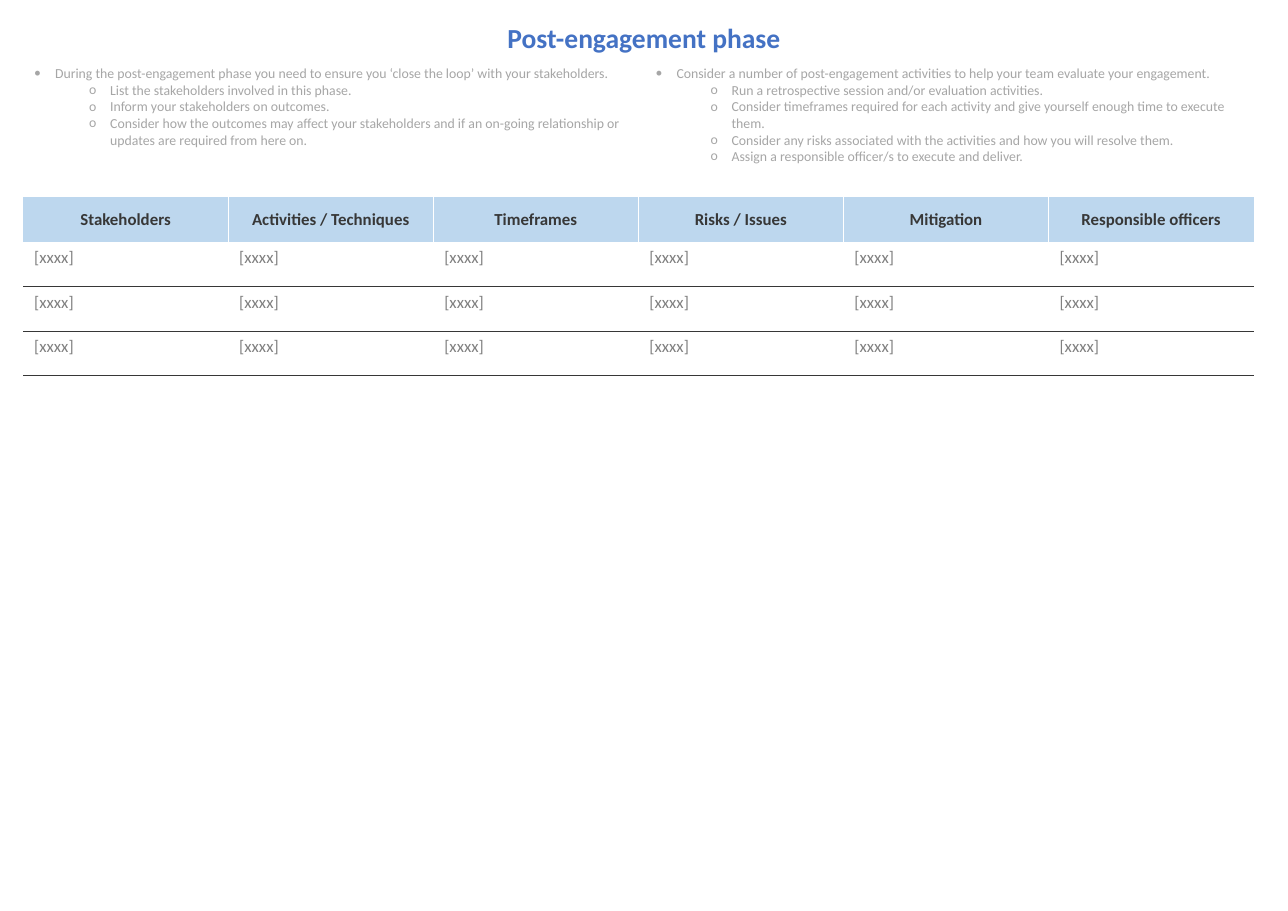
"""Build the post-engagement phase planning slide."""
from dataclasses import dataclass

from lxml import etree
from pptx import Presentation
from pptx import util as u
from pptx.dml.color import RGBColor
from pptx.enum import text
from pptx.oxml import ns


@dataclass(frozen=True)
class Theme:
    font: str = "Calibri"
    title: str = "4472C4"
    guide: str = "A6A6A6"
    ink: str = "373737"
    entry: str = "808080"
    header: str = "BDD7EE"
    divider: str = "FFFFFF"
    title_size: float = 18
    guide_size: float = 9
    table_size: float = 11
    border: float = 0.5
    plain_table: str = "{2D5ABB26-0587-4C30-8999-92F81FD0307C}"


class Deck:
    def __init__(self, theme, width, height):
        self.theme = theme
        self.prs = Presentation()
        self.prs.slide_width, self.prs.slide_height = u.Inches(width), u.Inches(height)
        self.s = self.prs.slides.add_slide(self.prs.slide_layouts[3])

    def run(self, p, words, size, color, bold=False):
        r = p.add_run()
        r.text = words
        r.font.name, r.font.size, r.font.bold = self.theme.font, u.Pt(size), bold
        r.font.color.rgb = RGBColor.from_string(color)

    def place(self, sp, left, top, width, height):
        sp.left, sp.top = u.Inches(left), u.Inches(top)
        sp.width, sp.height = u.Inches(width), u.Inches(height)
        tf = sp.text_frame
        tf.word_wrap = True
        tf.auto_size = text.MSO_AUTO_SIZE.NONE
        tf.vertical_anchor = text.MSO_ANCHOR.TOP
        return tf

    def title(self, words, *box):
        p = self.place(self.s.shapes.title, *box).paragraphs[0]
        p.alignment = text.PP_ALIGN.CENTER
        p.line_spacing = 1.07
        self.run(p, words, self.theme.title_size, self.theme.title, True)

    def bullets(self, idx, items, *box):
        tf = self.place(self.s.placeholders[idx], *box)
        for i, (level, words) in enumerate(items):
            p = tf.paragraphs[0] if i == 0 else tf.add_paragraph()
            p.level = level
            pPr = p._p.get_or_add_pPr()
            pPr.set("marL", str(u.Inches(0.19 + 0.5 * level)))
            pPr.set("indent", str(u.Inches(-0.19)))
            etree.SubElement(pPr, ns.qn("a:buFont"), typeface=self.theme.font)
            etree.SubElement(pPr, ns.qn("a:buChar"), char="•o"[level])
            p.space_before = u.Pt(0)
            self.run(p, words, self.theme.guide_size, self.theme.guide)

    def border(self, cell, side, color):
        tcPr = cell._tc.get_or_add_tcPr()
        ln = etree.SubElement(tcPr, ns.qn(f"a:ln{side}"), w=str(u.Pt(self.theme.border)))
        fill = etree.SubElement(ln, ns.qn("a:solidFill"))
        etree.SubElement(fill, ns.qn("a:srgbClr"), val=color)

    def header_cell(self, cell, words, sides):
        for side in sides:
            self.border(cell, side, self.theme.divider)
        cell.fill.solid()
        cell.fill.fore_color.rgb = RGBColor.from_string(self.theme.header)
        cell.vertical_anchor = text.MSO_ANCHOR.MIDDLE
        p = cell.text_frame.paragraphs[0]
        p.alignment = text.PP_ALIGN.CENTER
        self.run(p, words, self.theme.table_size, self.theme.ink, True)

    def entry_cell(self, cell, words):
        self.border(cell, "B", self.theme.ink)
        cell.fill.background()
        self.run(cell.text_frame.paragraphs[0], words, self.theme.table_size, self.theme.entry)

    def table(self, headers, entry, entry_rows, left, top, width, height):
        rows, cols = entry_rows + 1, len(headers)
        box = [u.Inches(v) for v in (left, top, width, height)]
        tbl = self.s.shapes.add_table(rows, cols, *box).table
        tbl.horz_banding = False
        tbl._tbl.tblPr.find(ns.qn("a:tableStyleId")).text = self.theme.plain_table
        for c, words in enumerate(headers):
            sides = ("L" if c else "") + ("R" if c < cols - 1 else "")
            self.header_cell(tbl.cell(0, c), words, sides)
            for row in range(1, rows):
                self.entry_cell(tbl.cell(row, c), entry)


CLOSING = [
    (0, "During the post-engagement phase you need to ensure you ‘close the loop’ with your stakeholders."),
    (1, "List the stakeholders involved in this phase."),
    (1, "Inform your stakeholders on outcomes."),
    (1, "Consider how the outcomes may affect your stakeholders and if an on-going relationship or "
        "updates are required from here on."),
]
EVALUATION = [
    (0, "Consider a number of post-engagement activities to help your team evaluate your engagement."),
    (1, "Run a retrospective session and/or evaluation activities."),
    (1, "Consider timeframes required for each activity and give yourself enough time to execute them."),
    (1, "Consider any risks associated with the activities and how you will resolve them."),
    (1, "Assign a responsible officer/s to execute and deliver."),
]
HEADERS = ["Stakeholders", "Activities / Techniques", "Timeframes",
           "Risks / Issues", "Mitigation", "Responsible officers"]


def main():
    deck = Deck(Theme(), 11.69, 8.27)
    deck.title("Post-engagement phase", 0, 0.12, 11.69, 0.43)
    deck.bullets(1, CLOSING, 0.21, 0.54, 5.53, 1.05)
    deck.bullets(2, EVALUATION, 5.85, 0.54, 5.53, 1.05)
    deck.table(HEADERS, "[xxxx]", 3, 0.21, 1.79, 11.17, 1.62)
    deck.prs.save("out.pptx")


if __name__ == "__main__":
    main()
